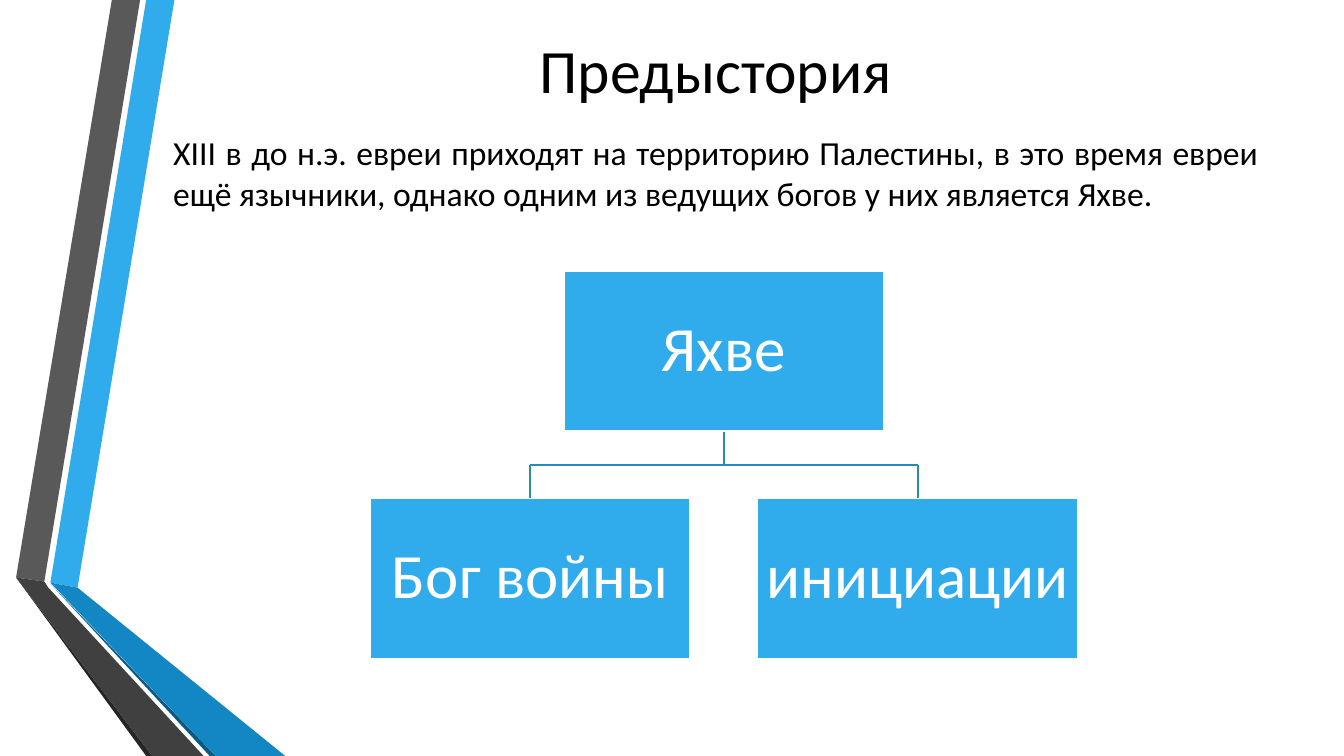
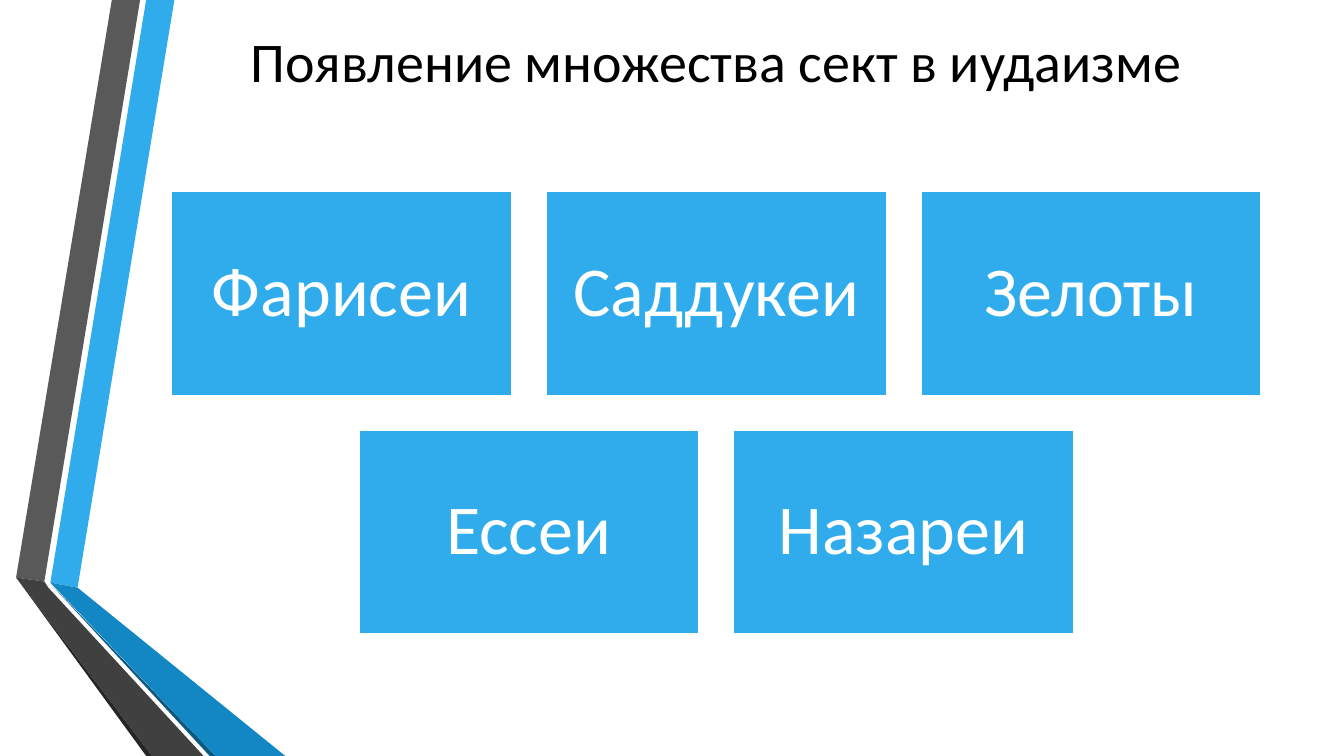
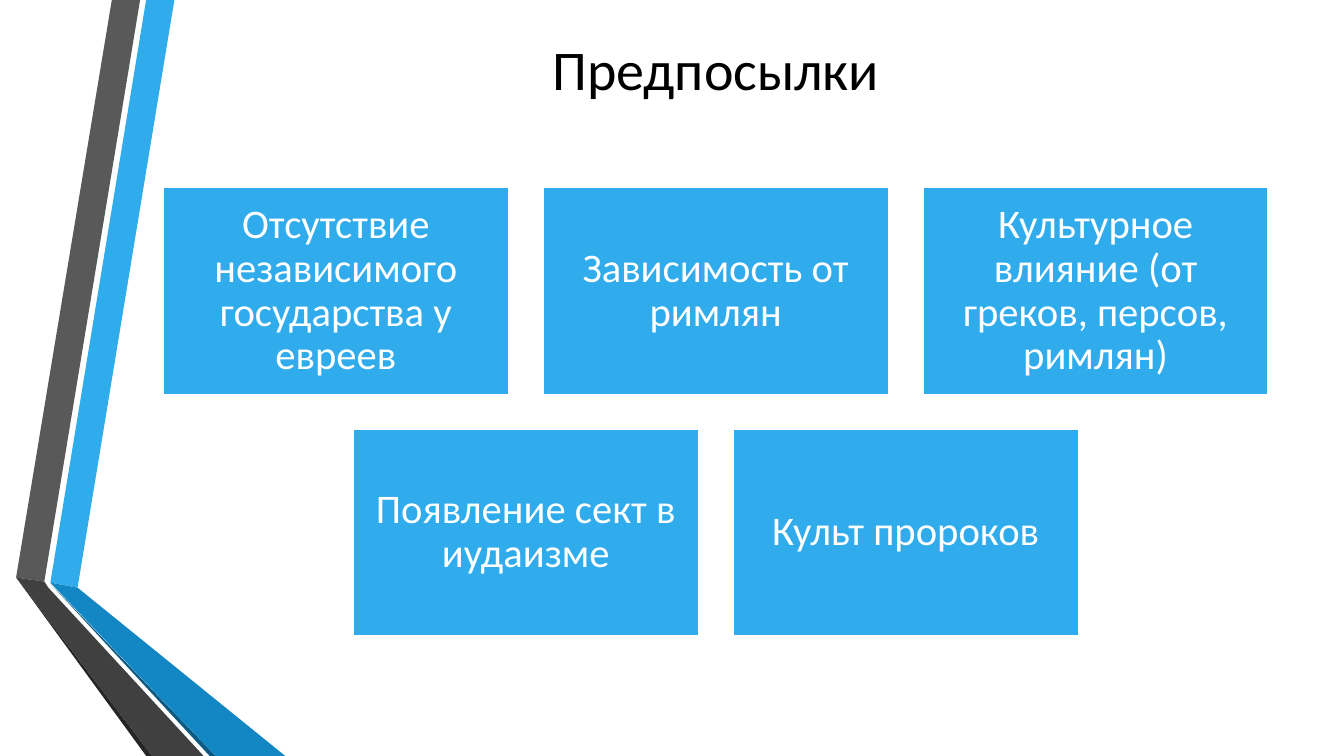
from dataclasses import dataclass
from itertools import pairwise

from lxml.etree import SubElement
from pptx import Presentation
from pptx.dml.color import RGBColor
from pptx.enum.shapes import MSO_CONNECTOR as Connector, MSO_SHAPE as Shape
from pptx.enum.text import MSO_ANCHOR as Anchor, MSO_AUTO_SIZE as AutoSize, PP_ALIGN as Align
from pptx.oxml.ns import qn
from pptx.util import Inches, Pt


@dataclass(frozen=True)
class Theme:
    font: str = "Calibri"
    text: str = "000000"
    on_accent: str = "FFFFFF"
    accent: str = "30ACEC"
    accent_dark: str = "1287C3"
    accent_deep: str = "0C5A82"
    gray: str = "595959"
    gray_dark: str = "404040"
    gray_deep: str = "262626"
    branch: str = "268ABD"
    title_large: int = 44
    title: int = 40
    body: int = 24
    node: int = 45
    sect: int = 50
    cause: int = 29
    line: float = 1.25


@dataclass(frozen=True)
class Box:
    left: float
    top: float
    width: float
    height: float

    @property
    def center(self):
        return self.left + self.width / 2

    @property
    def bottom(self):
        return self.top + self.height

    def lengths(self):
        return [Inches(v) for v in (self.left, self.top, self.width, self.height)]


THEME = Theme()
TITLE_BOX = Box(1.62, -0.28, 10.96, 1.92)
RIBBON_PARTS = [
    (THEME.accent, [(0.5, 5.78), (0.77, 5.83), (1.73, 0), (1.45, 0)]),
    (THEME.gray, [(1.39, 0), (1.11, 0), (0.16, 5.73), (0.44, 5.77)]),
    (THEME.gray_deep, [(0.16, 5.73), (1.45, 7.5), (1.51, 7.5)]),
    (THEME.accent_deep, [(0.5, 5.79), (2.08, 7.5), (2.14, 7.5)]),
    (THEME.accent_dark, [(0.5, 5.78), (2.14, 7.5), (2.83, 7.5), (0.77, 5.83)]),
    (THEME.gray_dark, [(2.02, 7.5), (0.48, 5.83), (0.44, 5.77), (0.16, 5.73), (1.51, 7.5)]),
]


def rgb(color):
    return RGBColor.from_string(color)


def write(shape, text, size, color, align=Align.CENTER, inset=0.1):
    """Fill a shape with one vertically centred paragraph and return it."""
    frame = shape.text_frame
    frame.text = text
    frame.word_wrap = True
    frame.auto_size = AutoSize.NONE
    frame.vertical_anchor = Anchor.MIDDLE
    frame.margin_left = frame.margin_right = Inches(inset)
    frame.margin_top = frame.margin_bottom = Inches(min(inset, 0.21))
    paragraph = frame.paragraphs[0]
    paragraph.alignment = align
    font = paragraph.runs[0].font
    font.name, font.size = THEME.font, Pt(size)
    font.color.rgb = rgb(color)
    return paragraph


def add_ribbon(slide, layout):
    """Draw the folded ribbon and move it to the layout that all slides share."""
    for placeholder in list(layout.placeholders)[1:]:
        layout.shapes.element.remove(placeholder.element)
    for position, (color, points) in enumerate(RIBBON_PARTS, start=2):
        start, *rest = [(Inches(x), Inches(y)) for x, y in points]
        outline = slide.shapes.build_freeform(*start)
        outline.add_line_segments(rest, close=True)
        band = outline.convert_to_shape()
        band.shadow.inherit = False
        band.fill.solid()
        band.fill.fore_color.rgb = rgb(color)
        band.line.fill.background()
        layout.shapes.element.insert(position, band.element)


def add_title(slide, text, size=THEME.title, box=TITLE_BOX):
    title = slide.shapes.title
    title.left, title.top, title.width, title.height = box.lengths()
    write(title, text, size, THEME.text)


def add_body(slide, text, box):
    body = slide.shapes.add_textbox(*box.lengths())
    paragraph = write(body, text, THEME.body, THEME.text, Align.JUSTIFY)
    paragraph.space_before, paragraph.space_after = Pt(5), Pt(6)


def add_card(slide, text, size, inset, box):
    card = slide.shapes.add_shape(Shape.RECTANGLE, *box.lengths())
    card.shadow.inherit = False
    card.fill.solid()
    card.fill.fore_color.rgb = rgb(THEME.accent)
    card.line.color.rgb = rgb(THEME.on_accent)
    card.line.width = Pt(THEME.line)
    write(card, text, size, THEME.on_accent, inset=inset).line_spacing = 0.9


def add_branch(slide, points):
    """Join the points with straight connectors."""
    for start, end in pairwise(points):
        segment = slide.shapes.add_connector(
            Connector.STRAIGHT, *[Inches(v) for v in (*start, *end)])
        segment.line.color.rgb = rgb(THEME.branch)
        segment.line.width = Pt(THEME.line)
        SubElement(segment.element.spPr, qn("a:effectLst"))


def centred_row(count, area, top, width, height, gap):
    left = area.center - (count * width + (count - 1) * gap) / 2
    return [Box(left + i * (width + gap), top, width, height) for i in range(count)]


def add_tree(slide, parent, children, area):
    count = len(children)
    width = area.width / (count + 0.21 * (count - 1))
    height, gap = width / 2, 0.21 * width
    root, = centred_row(1, area, area.top, width, height, gap)
    leaves = centred_row(count, area, root.bottom + gap, width, height, gap)
    fork = root.bottom + gap / 2
    add_branch(slide, [(root.center, root.bottom), (root.center, fork)])
    for leaf in leaves:
        add_branch(slide, [(root.center, fork), (leaf.center, fork), (leaf.center, leaf.top)])
    for text, box in zip([parent, *children], [root, *leaves]):
        add_card(slide, text, THEME.node, 0.03, box)


def add_card_grid(slide, rows, size, inset, area):
    """Place centred rows of cards; the longest row spans the area."""
    longest = max(len(row) for row in rows)
    width = area.width / (longest + 0.1 * (longest - 1))
    height, gap = 0.6 * width, 0.1 * width
    for index, row in enumerate(rows):
        top = area.top + index * (height + gap)
        for text, box in zip(row, centred_row(len(row), area, top, width, height, gap)):
            add_card(slide, text, size, inset, box)


def background_slide(slide):
    add_title(slide, "Предыстория", THEME.title_large)
    add_body(slide, "XIII в до н.э. евреи приходят на территорию Палестины, в это время "
                    "евреи ещё язычники, однако одним из ведущих богов у них является Яхве.",
             Box(1.62, 0, 10.96, 3.42))
    add_tree(slide, "Яхве", ["Бог войны", "инициации"], Box(3.67, 2.69, 7.02, 3.84))


def sects_slide(slide):
    add_title(slide, "Появление множества сект в иудаизме",
              box=Box(1.62, -0.36, 10.96, 1.92))
    add_card_grid(slide, [["Фарисеи", "Саддукеи", "Зелоты"], ["Ессеи", "Назареи"]],
                  THEME.sect, 0.21, Box(1.7, 1.9, 10.81, 4.39))


def causes_slide(slide):
    add_title(slide, "Предпосылки")
    causes = [
        ["Отсутствие независимого государства у евреев", "Зависимость от римлян",
         "Культурное влияние (от греков, персов, римлян)"],
        ["Появление сект в иудаизме", "Культ пророков"],
    ]
    add_card_grid(slide, causes, THEME.cause, 0.12, Box(1.62, 1.86, 10.96, 4.44))


def main():
    deck = Presentation()
    deck.slide_width, deck.slide_height = Inches(13.33), Inches(7.5)
    layout = deck.slide_layouts.get_by_name("Title Only")
    builders = [background_slide, sects_slide, causes_slide]
    slides = [deck.slides.add_slide(layout) for _ in builders]
    add_ribbon(slides[0], layout)
    for build, slide in zip(builders, slides):
        build(slide)
    deck.save("out.pptx")


if __name__ == "__main__":
    main()
